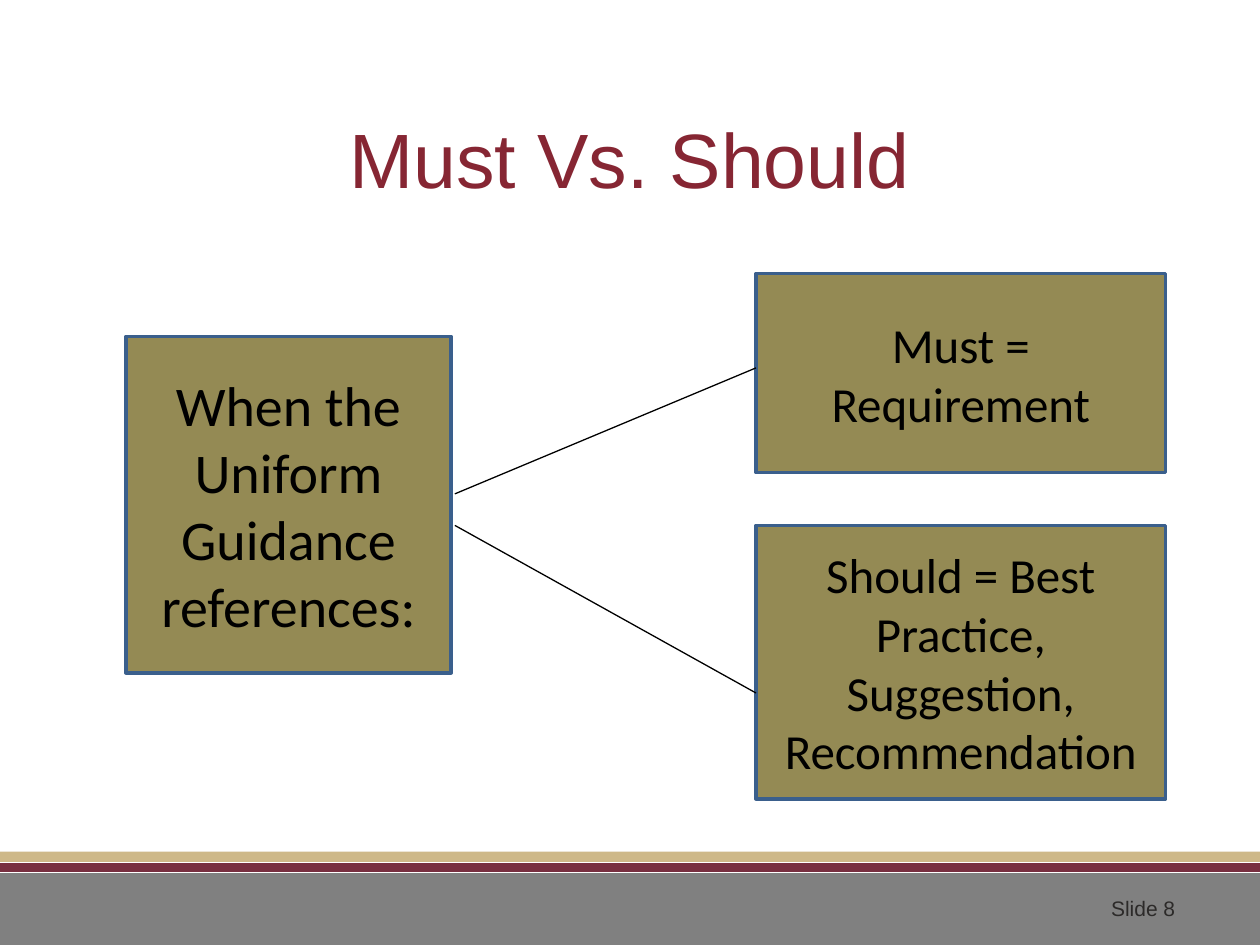
from dataclasses import dataclass

from lxml.etree import SubElement
from pptx import Presentation
from pptx.dml.color import RGBColor
from pptx.enum.shapes import MSO_CONNECTOR, MSO_SHAPE
from pptx.enum.text import MSO_ANCHOR as Anchor, MSO_AUTO_SIZE as AutoSize, PP_ALIGN as Align
from pptx.oxml.ns import qn
from pptx.util import Inches, Pt


@dataclass
class Box:
    x: float
    y: float
    w: float
    h: float


@dataclass
class Process:
    box: Box
    text: str
    size: int


@dataclass
class Link:
    x1: float
    y1: float
    x2: float
    y2: float


STRIPES = [
    (Box(0, 6.93, 10, 0.57), "808080"),
    (Box(0, 6.85, 10, 0.07), "782F40"),
    (Box(0, 6.76, 10, 0.08), "CEB888"),
]
PROCESSES = [
    Process(Box(1, 2.67, 2.58, 2.67), "When the Uniform Guidance references:", 32),
    Process(Box(6, 2.17, 3.25, 1.58), "Must = Requirement", 28),
    Process(Box(6, 4.17, 3.25, 2.17),
            "Should = Best Practice, Suggestion, Recommendation", 28),
]
LINKS = [Link(3.61, 4.17, 6, 5.5), Link(3.61, 3.92, 6, 2.92)]


def rgb(color: str) -> RGBColor:
    return RGBColor.from_string(color)


def place(box: Box) -> tuple:
    return tuple(Inches(v) for v in (box.x, box.y, box.w, box.h))


def write(tf, text: str, font: str, size: int, color: str,
          align=Align.CENTER, wrap: bool = True) -> None:
    tf.word_wrap = wrap
    p = tf.paragraphs[0]
    p.alignment = align
    r = p.add_run()
    r.text = text
    r.font.name = font
    r.font.size = Pt(size)
    r.font.color.rgb = rgb(color)


def add_filled(s, kind, box: Box, fill: str):
    sp = s.shapes.add_shape(kind, *place(box))
    sp.shadow.inherit = False
    sp.fill.solid()
    sp.fill.fore_color.rgb = rgb(fill)
    sp.line.fill.background()
    return sp


def add_process(s, item: Process) -> None:
    sp = add_filled(s, MSO_SHAPE.FLOWCHART_PROCESS, item.box, "948A54")
    sp.line.color.rgb = rgb("3A5F8C")
    sp.line.width = Pt(2)
    sp.text_frame.vertical_anchor = Anchor.MIDDLE
    write(sp.text_frame, item.text, "Calibri", item.size, "000000")


def add_link(s, link: Link) -> None:
    ends = (Inches(v) for v in (link.x1, link.y1, link.x2, link.y2))
    line = s.shapes.add_connector(MSO_CONNECTOR.STRAIGHT, *ends)
    line.line.color.rgb = rgb("000000")
    line.line.width = Pt(0.75)
    SubElement(line._element.spPr, qn("a:effectLst"))


def main() -> None:
    prs = Presentation()
    prs.slide_width, prs.slide_height = Inches(10), Inches(7.5)
    s = prs.slides.add_slide(prs.slide_layouts[6])

    for box, fill in STRIPES:
        add_filled(s, MSO_SHAPE.RECTANGLE, box, fill)

    number = s.shapes.add_textbox(*place(Box(8.72, 7.06, 0.83, 0.3))).text_frame
    number.auto_size = AutoSize.SHAPE_TO_FIT_TEXT
    write(number, "Slide 8", "Arial", 12, "2C2A29", Align.LEFT, wrap=False)

    title = s.shapes.add_textbox(*place(Box(0.5, 0.75, 9, 1))).text_frame
    title.vertical_anchor = Anchor.MIDDLE
    write(title, "Must Vs. Should", "Arial", 44, "862633")

    for item in PROCESSES:
        add_process(s, item)
    for link in LINKS:
        add_link(s, link)

    prs.save("out.pptx")


if __name__ == "__main__":
    main()
